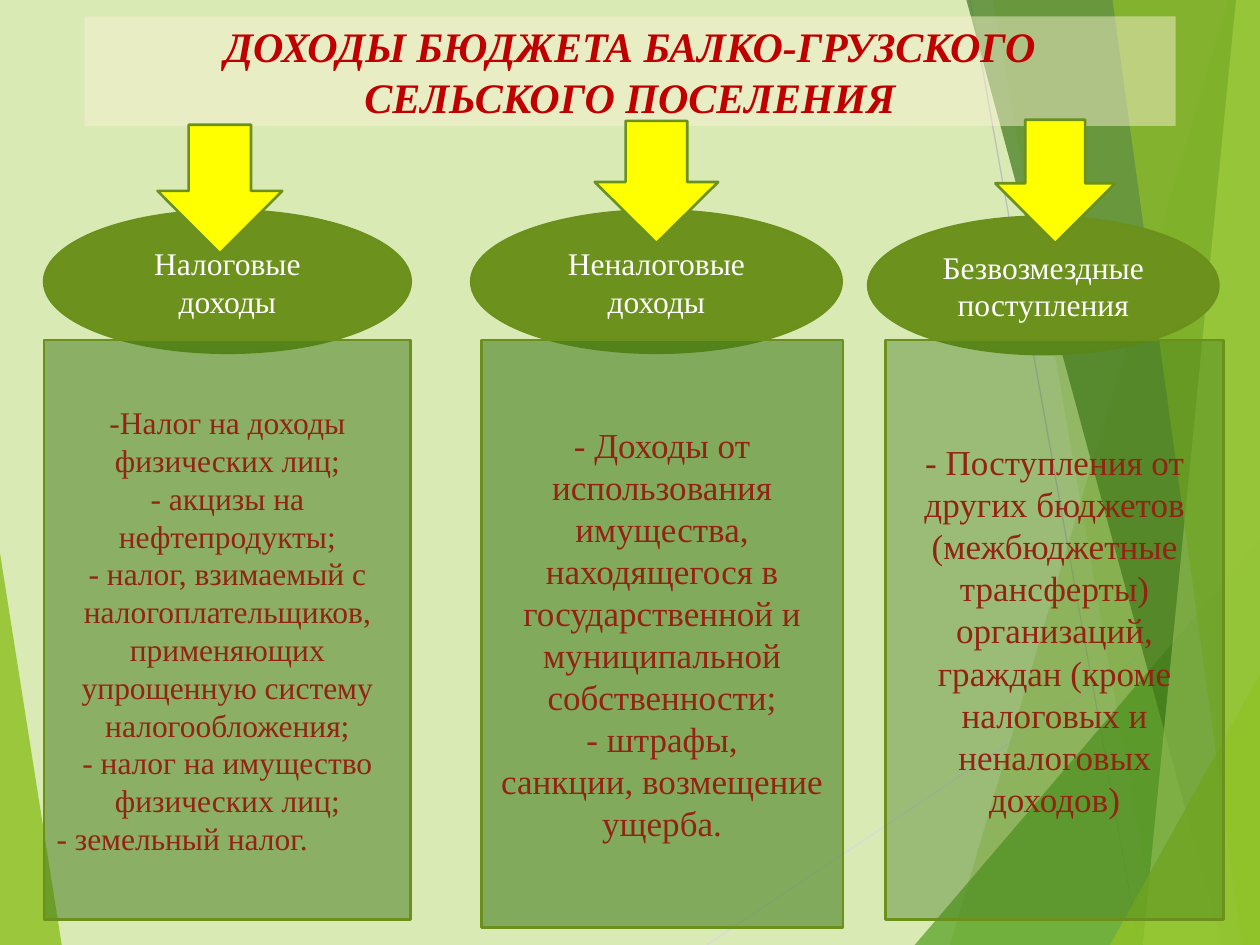
"""Build a slide showing the three revenue groups of a settlement budget."""
from dataclasses import dataclass

from lxml.etree import SubElement
from pptx import Presentation
from pptx.dml.color import RGBColor
from pptx.enum.shapes import MSO_CONNECTOR, MSO_SHAPE
from pptx.enum.text import MSO_ANCHOR, MSO_AUTO_SIZE, PP_ALIGN
from pptx.oxml.ns import qn
from pptx.util import Inches, Pt


@dataclass(frozen=True)
class Theme:
    font: str = "Times New Roman"
    background: str = "D9EAB5"
    lime: str = "90C226"
    green: str = "54A021"
    forest: str = "3F7819"
    pale: str = "C0E474"
    cream: str = "FAF1D2"
    olive: str = "6C921D"
    outline: str = "6B901C"
    yellow: str = "FFFF00"
    title: str = "C00000"
    body: str = "932313"
    white: str = "FFFFFF"
    title_size: int = 24
    large_size: int = 20
    small_size: int = 18
    outline_width: float = 1.5
    ray_width: float = 0.75


theme = Theme()


def paint(shape, color, opacity=100, outline=None):
    shape.fill.solid()
    shape.fill.fore_color.rgb = RGBColor.from_string(color)
    if opacity < 100:
        solid = shape.fill._xPr.find(qn("a:solidFill"))
        SubElement(solid[0], qn("a:alpha"), val=str(opacity * 1000))
    if outline:
        shape.line.color.rgb = RGBColor.from_string(outline)
        shape.line.width = Pt(theme.outline_width)
    else:
        shape.line.fill.background()


def write(shape, paragraphs, size, color, bold=False, italic=False, last_align=PP_ALIGN.CENTER):
    frame = shape.text_frame
    frame.word_wrap = True
    frame.auto_size = MSO_AUTO_SIZE.NONE
    frame.vertical_anchor = MSO_ANCHOR.MIDDLE
    frame.text = "\n".join(paragraphs)
    for para in frame.paragraphs:
        para.alignment = PP_ALIGN.CENTER
        for span in para.runs:
            span.font.name = theme.font
            span.font.size = Pt(size)
            span.font.bold = bold
            span.font.italic = italic
            span.font.color.rgb = RGBColor.from_string(color)
    frame.paragraphs[-1].alignment = last_align


deck = Presentation()
deck.slide_width, deck.slide_height = Inches(10), Inches(7.5)
page = deck.slides.add_slide(deck.slide_layouts[5])
page.background.fill.solid()
page.background.fill.fore_color.rgb = RGBColor.from_string(theme.background)

rays = [
    ((5.61, 7.5), (10, 4.57), "D9D9D9"),
    ((7.7, 0), (9.04, 7.5), "BFBFBF"),
]
for start, end, color in rays:
    ray = page.shapes.add_connector(
        MSO_CONNECTOR.STRAIGHT, *[Inches(value) for value in start + end]
    )
    ray.line.color.rgb = RGBColor.from_string(color)
    ray.line.width = Pt(theme.ray_width)
    SubElement(ray._element.spPr, qn("a:effectLst"))

facets = [
    ([(0, 4.39), (0.49, 7.5), (0, 7.5)], theme.lime, 85),
    ([(9.75, 0), (7.54, 7.5), (10, 7.5), (10, 0)], theme.lime, 30),
    ([(7.88, 0), (9.19, 7.5), (10, 7.5), (10, 0)], theme.lime, 20),
    ([(7.26, 7.5), (10, 4.29), (10, 7.5)], theme.green, 72),
    ([(7.67, 0), (9.7, 7.5), (10, 7.5), (10, 0)], theme.forest, 70),
    ([(9.81, 0), (9.07, 7.5), (10, 7.5), (10, 0)], theme.pale, 70),
    ([(8.83, 0), (9.86, 7.5), (10, 7.5), (10, 0)], theme.lime, 65),
    ([(8.81, 7.5), (10, 5.35), (10, 7.5)], theme.lime, 80),
]
for corners, color, opacity in facets:
    points = [(Inches(x), Inches(y)) for x, y in corners]
    builder = page.shapes.build_freeform(*points[0])
    builder.add_line_segments(points[1:], close=True)
    facet = builder.convert_to_shape()
    facet.shadow.inherit = False
    paint(facet, color, opacity)

title = page.shapes.title
title.left, title.top = Inches(0.67), Inches(0.13)
title.width, title.height = Inches(8.66), Inches(0.87)
paint(title, theme.cream, 49)
write(title, ["ДОХОДЫ БЮДЖЕТА БАЛКО-ГРУЗСКОГО СЕЛЬСКОГО ПОСЕЛЕНИЯ"],
      theme.title_size, theme.title, bold=True, italic=True)
page.shapes._spTree.append(title._element)

columns = [
    {
        "heading": "Налоговые доходы",
        "items": [
            "-Налог на доходы физических лиц;",
            "- акцизы на нефтепродукты;",
            "- налог, взимаемый с налогоплательщиков, применяющих упрощенную систему налогообложения;",
            "- налог на имущество физических лиц;",
            "- земельный налог.",
        ],
        "size": theme.small_size, "last_align": PP_ALIGN.LEFT, "opacity": 51,
        "oval": (0.35, 1.67, 2.91, 1.13),
        "panel": (0.35, 2.7, 2.91, 4.6),
        "arrow": (1.25, 0.99, 0.99, 1.02),
    },
    {
        "heading": "Неналоговые доходы",
        "items": [
            "- Доходы от использования имущества, находящегося в государственной "
            "и муниципальной собственности;",
            "- штрафы,\vсанкции, возмещение ущерба.",
        ],
        "size": theme.large_size, "last_align": PP_ALIGN.CENTER, "opacity": 56,
        "oval": (3.74, 1.67, 2.94, 1.13),
        "panel": (3.82, 2.7, 2.87, 4.66),
        "arrow": (4.72, 0.96, 0.98, 0.97),
    },
    {
        "heading": "Безвозмездные поступления",
        "items": [
            "- Поступления от других бюджетов (межбюджетные трансферты) организаций, "
            "граждан (кроме налоговых и неналоговых доходов)",
        ],
        "size": theme.large_size, "last_align": PP_ALIGN.CENTER, "opacity": 40,
        "oval": (6.89, 1.72, 2.78, 1.09),
        "panel": (7.03, 2.7, 2.68, 4.6),
        "arrow": (7.9, 0.95, 0.95, 0.98),
    },
]
for column in columns:
    parts = {}
    for part, preset, color, opacity in (
        ("oval", MSO_SHAPE.OVAL, theme.olive, 100),
        ("panel", MSO_SHAPE.RECTANGLE, theme.forest, column["opacity"]),
        ("arrow", MSO_SHAPE.DOWN_ARROW, theme.yellow, 100),
    ):
        box = page.shapes.add_shape(preset, *[Inches(value) for value in column[part]])
        box.shadow.inherit = False
        paint(box, color, opacity, theme.outline)
        parts[part] = box
    write(parts["oval"], [column["heading"]], theme.small_size, theme.white)
    write(parts["panel"], column["items"], column["size"], theme.body,
          last_align=column["last_align"])

deck.save("out.pptx")
